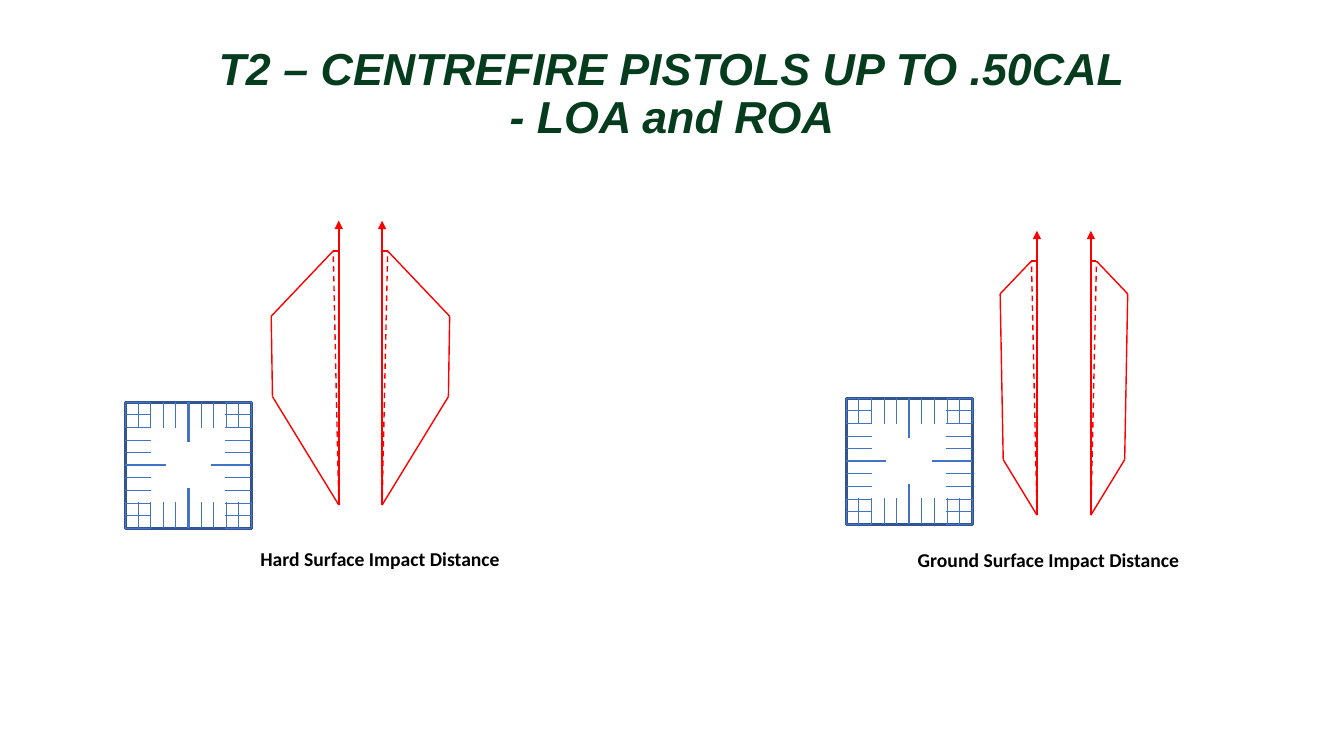
from dataclasses import dataclass

import pptx
import pptx.dml.color
import pptx.enum.dml
import pptx.enum.shapes
import pptx.enum.text
import pptx.oxml
import pptx.oxml.ns
import pptx.util

SLIDE_W, SLIDE_H = pptx.util.Inches(13.33), pptx.util.Inches(7.5)
CELL = SLIDE_H / 60
COLUMNS = SLIDE_W / CELL
RED, BLUE, NAVY = "FF0000", "4472C4", "325491"
GREEN, BLACK = "053C1E", "000000"
GRID_CELLS = 10
MID = GRID_CELLS // 2
TICK, MID_TICK = 2.06, 3.2
TOP, LEFT, BOTTOM, RIGHT = range(4)


@dataclass(frozen=True)
class Lane:
    half_width: float
    half_width_low: float
    shoulder: float
    hip: float
    tip: float = 22.56
    head: float = 20.16
    head_width: float = 0.44


@dataclass(frozen=True)
class Diagram:
    caption: str
    caption_box: tuple[float, float, float, float]
    grid_col: float
    grid_row: float
    left_col: float
    right_col: float
    base_row: float
    lane: Lane


DIAGRAMS = [
    Diagram("Hard Surface Impact Distance", (15.04, 43.04, 30.24, 2.72),
            9.94, 31.92, 26.88, 30.32, 40.08, Lane(5.36, 5.26, 14.98, 8.6)),
    Diagram("Ground Surface Impact Distance", (68.08, 43.12, 30.24, 4.56),
            67.14, 31.6, 82.28, 86.56, 40.88, Lane(2.92, 2.68, 17.56, 4.4)),
]


def cells(n: float) -> int:
    return round(n * CELL)


def rgb(color: str) -> pptx.dml.color.RGBColor:
    return pptx.dml.color.RGBColor.from_string(color)


def add_text(slide, box, lines, *, size, font, color, italic=False,
             spacing=1.0, anchor=pptx.enum.text.MSO_ANCHOR.TOP):
    sp = slide.shapes.add_textbox(*map(cells, box))
    tf = sp.text_frame
    tf.word_wrap = True
    tf.vertical_anchor = anchor
    for i, line in enumerate(lines):
        p = tf.add_paragraph() if i else tf.paragraphs[0]
        p.alignment = pptx.enum.text.PP_ALIGN.CENTER
        p.line_spacing = spacing
        r = p.add_run()
        r.text = line
        r.font.size = pptx.util.Pt(size)
        r.font.name = font
        r.font.bold = True
        r.font.italic = italic
        r.font.color.rgb = rgb(color)
    return sp


def add_line(group, start, end, *, color, width, dashed=False, arrow=False):
    cxn = group.shapes.add_connector(pptx.enum.shapes.MSO_CONNECTOR.STRAIGHT,
                                     *map(cells, (*start, *end)))
    cxn.line.color.rgb = rgb(color)
    cxn.line.width = pptx.util.Pt(width)
    if dashed:
        cxn.line.dash_style = pptx.enum.dml.MSO_LINE.DASH
    if arrow:
        ln = cxn.line._get_or_add_ln()
        tail = pptx.oxml.ns.qn("a:tailEnd")
        ln.append(ln.makeelement(tail, {"type": "triangle"}))
    sp_pr = cxn._element.spPr
    sp_pr.append(sp_pr.makeelement(pptx.oxml.ns.qn("a:effectLst"), {}))
    return cxn


def add_grid(group, col: float, row: float) -> None:
    sp = group.shapes.add_shape(pptx.enum.shapes.MSO_SHAPE.RECTANGLE,
                                *map(cells, (col, row, GRID_CELLS, GRID_CELLS)))
    sp.shadow.inherit = False
    sp.fill.background()
    sp.line.color.rgb = rgb(NAVY)
    sp.line.width = pptx.util.Pt(2)
    far_col, far_row = col + GRID_CELLS, row + GRID_CELLS
    for i in range(GRID_CELLS + 1):
        length = MID_TICK if i == MID else TICK
        x, y = col + i, row + i
        ticks = {
            LEFT: ((col, y), (col + length, y)),
            RIGHT: ((far_col, y), (far_col - length, y)),
            TOP: ((x, row), (x, row + length)),
            BOTTOM: ((x, far_row), (x, far_row - length)),
        }
        for side, (start, end) in ticks.items():
            cxn = add_line(group, start, end, color=BLUE,
                           width=1.75 if i == MID else 0.5)
            if i == MID:
                cxn.begin_connect(sp, side)


def add_lane(group, col: float, row: float, lane: Lane, side: int) -> None:
    base = (col, row)
    top = (col, row - lane.head)
    head = (col + side * lane.head_width, row - lane.head)
    shoulder = (col + side * lane.half_width, row - lane.shoulder)
    hip = (col + side * lane.half_width_low, row - lane.hip)
    add_line(group, base, (col, row - lane.tip), color=RED, width=1.5, arrow=True)
    add_line(group, base, head, color=RED, width=1, dashed=True)
    outline = [base, hip, shoulder, head, top]
    for start, end in zip(outline, outline[1:]):
        add_line(group, start, end, color=RED, width=1)


def main() -> None:
    prs = pptx.Presentation()
    prs.slide_width, prs.slide_height = SLIDE_W, SLIDE_H
    slide = prs.slides.add_slide(prs.slide_layouts[6])
    add_text(slide, (0, 3.44, COLUMNS, 8.16),
             ["T2 – CENTREFIRE PISTOLS UP TO .50CAL", "- LOA and ROA"],
             size=32, font="Arial", color=GREEN, italic=True, spacing=0.9,
             anchor=pptx.enum.text.MSO_ANCHOR.MIDDLE)
    for d in DIAGRAMS:
        add_text(slide, d.caption_box, [d.caption],
                 size=14, font="Calibri", color=BLACK)
        group = slide.shapes.add_group_shape()
        add_grid(group, d.grid_col, d.grid_row)
        add_lane(group, d.left_col, d.base_row, d.lane, -1)
        add_lane(group, d.right_col, d.base_row, d.lane, 1)
    prs.save("out.pptx")


if __name__ == "__main__":
    main()
